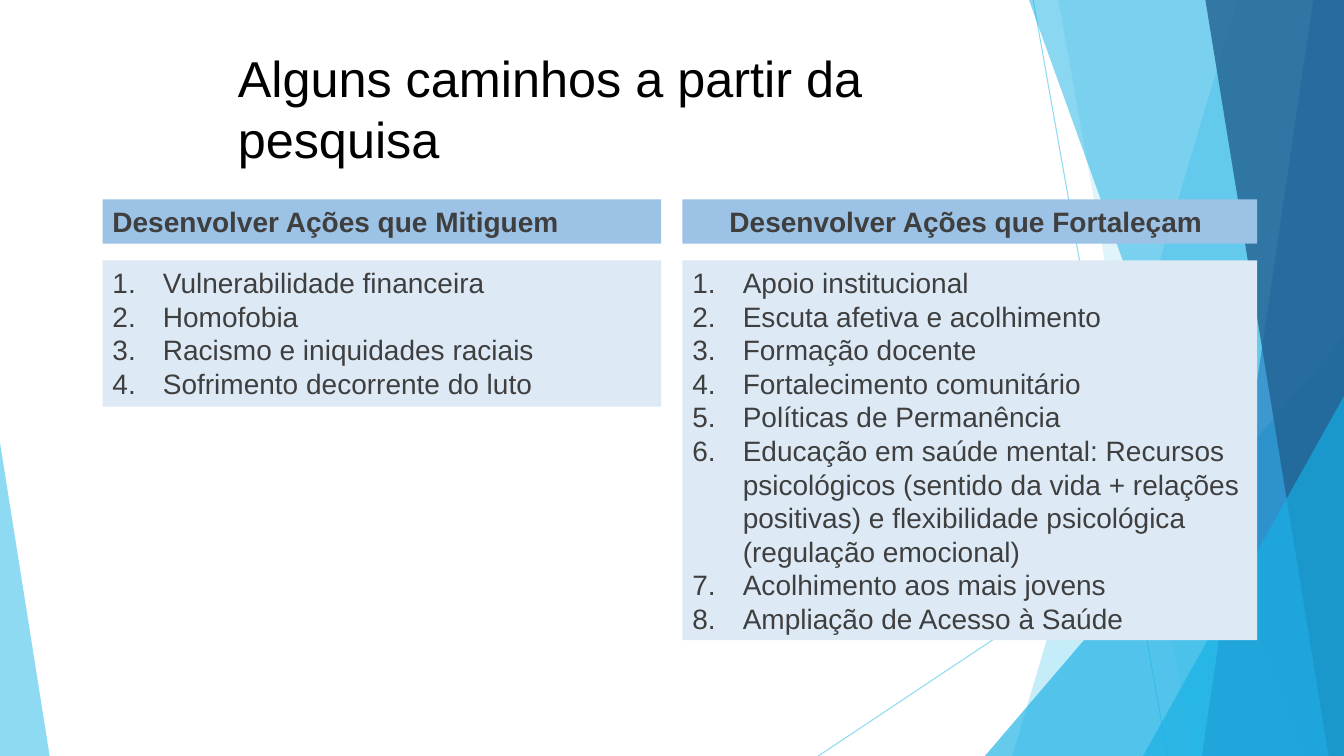
from lxml import etree
from pptx import Presentation, util as u
from pptx.dml.color import RGBColor
from pptx.enum import shapes, text
from pptx.oxml import ns

Pt = u.Pt


def paint(fill, color, opacity=100):
    fill.solid()
    fill.fore_color.rgb = RGBColor.from_string(color)
    if opacity < 100:
        tone = fill._xPr.find(".//" + ns.qn("a:srgbClr"))
        etree.SubElement(tone, ns.qn("a:alpha"), val=str(opacity * 1000))


def write(shape, lines, size, color, bold=False, align=text.PP_ALIGN.LEFT, numbered=False):
    frame = shape.text_frame
    frame.word_wrap = True
    frame.vertical_anchor = text.MSO_ANCHOR.TOP
    frame.text = "\n".join(lines)
    for para in frame.paragraphs:
        para.alignment = align
        para.font.name = "Arial"
        para.font.size = Pt(size)
        para.font.bold = bold
        para.font.color.rgb = RGBColor.from_string(color)
        if numbered:
            props = para._p.get_or_add_pPr()
            props.set("marL", str(Pt(36)))
            props.set("indent", str(Pt(-36)))
            number = etree.Element(ns.qn("a:buAutoNum"), type="arabicPeriod")
            props.insert(0, number)


deck = Presentation()
deck.slide_width, deck.slide_height = Pt(960), Pt(540)
page = deck.slides.add_slide(deck.slide_layouts[6])

for x1, y1, x2, y2 in [(738, 0, 834, 540), (960, 290, 584.5, 540)]:
    line = page.shapes.add_connector(
        shapes.MSO_CONNECTOR.STRAIGHT, Pt(x1), Pt(y1), Pt(x2), Pt(y2))
    line.line.width = Pt(0.75)
    paint(line.line.fill, "5FCBEF", 70)
    etree.SubElement(line._element.spPr, ns.qn("a:effectLst"))

facets = [
    ("band", (884, 723), "5FCBEF", 36),
    ("band", (756, 852), "5FCBEF", 20),
    ("triangle", (703.5, 240, 256.5, 300, 1), "17B0E4", 66),
    ("band", (735, 929.5), "17B0E4", 50),
    ("band", (938, 858.5), "2E83C3", 70),
    ("band", (861, 949), "226292", 80),
    ("triangle", (816.5, 283, 143.5, 257, 1), "17B0E4", 66),
    ("triangle", (0, 316, 35.5, 224, 0), "5FCBEF", 70),
]
for kind, place, color, opacity in facets:
    if kind == "band":
        top_x, bottom_x = place
        outline = page.shapes.build_freeform(Pt(top_x), 0)
        outline.add_line_segments(
            [(Pt(960), 0), (Pt(960), Pt(540)), (Pt(bottom_x), Pt(540))], close=True)
        facet = outline.convert_to_shape()
    else:
        *frame, apex = place
        facet = page.shapes.add_shape(
            shapes.MSO_SHAPE.ISOSCELES_TRIANGLE, *map(Pt, frame))
        facet.adjustments[0] = apex
    facet.shadow.inherit = False
    facet.line.fill.background()
    paint(facet.fill, color, opacity)

title = page.shapes.add_textbox(Pt(162.75), Pt(30.25), Pt(542), Pt(94.5))
write(title, ["Alguns caminhos a partir da pesquisa"], 36, "000000")

columns = [
    (73.25, 399, 104.5, "Desenvolver Ações que Mitiguem", text.PP_ALIGN.LEFT, [
        "Vulnerabilidade financeira",
        "Homofobia",
        "Racismo e iniquidades raciais",
        "Sofrimento decorrente do luto",
    ]),
    (487.5, 410.5, 271.25, "Desenvolver Ações que Fortaleçam ", text.PP_ALIGN.CENTER, [
        "Apoio institucional",
        "Escuta afetiva e acolhimento",
        "Formação docente",
        "Fortalecimento comunitário",
        "Políticas de Permanência",
        "Educação em saúde mental: Recursos psicológicos (sentido da vida + relações "
        "positivas) e flexibilidade psicológica (regulação emocional)",
        "Acolhimento aos mais jovens",
        "Ampliação de Acesso à Saúde",
    ]),
]
for left, width, height, heading, align, actions in columns:
    panels = [
        (186, height, "DDEAF6", actions, False, text.PP_ALIGN.LEFT, True),
        (142.5, 31.5, "9CC2E5", [heading], True, align, False),
    ]
    for top, tall, color, lines, bold, side, numbered in panels:
        box = page.shapes.add_shape(
            shapes.MSO_SHAPE.RECTANGLE, Pt(left), Pt(top), Pt(width), Pt(tall))
        box.shadow.inherit = False
        box.line.fill.background()
        paint(box.fill, color)
        write(box, lines, 20, "3F3F3F", bold, side, numbered)

deck.save("out.pptx")
